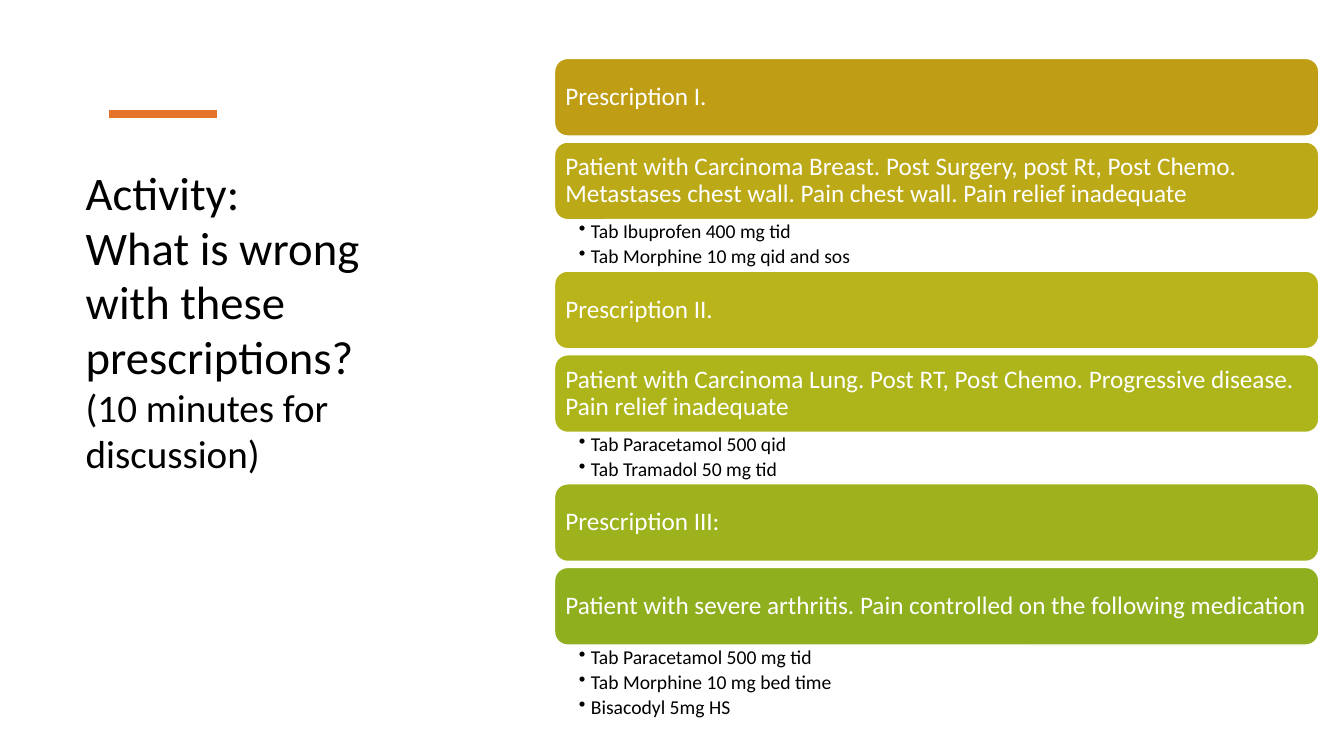
from lxml.etree import SubElement
from pptx import Presentation
from pptx.dml.color import RGBColor
from pptx.enum.shapes import MSO_CONNECTOR, MSO_SHAPE
from pptx.enum.text import MSO_ANCHOR, PP_ALIGN
from pptx.oxml.ns import qn
from pptx.util import Inches, Pt

FONT = "Calibri"
WHITE = RGBColor(0xFF, 0xFF, 0xFF)
BLACK = RGBColor(0x00, 0x00, 0x00)
ORANGE = RGBColor(0xE7, 0x72, 0x29)

# Heading, case, medication, colours of the two bars
PRESCRIPTIONS = [
    ("Prescription I.",
     "Patient with Carcinoma Breast. Post Surgery, post Rt, Post Chemo. "
     "Metastases chest wall. Pain chest wall. Pain relief inadequate",
     ["Tab Ibuprofen 400 mg tid", "Tab Morphine 10 mg qid and sos"],
     (RGBColor(0xBF, 0x9E, 0x15), RGBColor(0xBC, 0xA9, 0x17))),
    ("Prescription II.",
     "Patient with Carcinoma Lung. Post RT, Post Chemo. "
     "Progressive disease. Pain relief inadequate",
     ["Tab Paracetamol 500 qid", "Tab Tramadol 50 mg tid"],
     (RGBColor(0xB9, 0xB4, 0x19), RGBColor(0xAD, 0xB5, 0x1B))),
    ("Prescription III:",
     "Patient with severe arthritis. Pain controlled on the following medication",
     ["Tab Paracetamol 500 mg tid", "Tab Morphine 10 mg bed time",
      "Bisacodyl 5mg HS"],
     (RGBColor(0x9D, 0xB2, 0x1D), RGBColor(0x8F, 0xAF, 0x1F))),
]

LEFT, TOP, WIDTH = 5.5, 0.58, 7.58
BAR_HEIGHT, BAR_PITCH = 0.77, 0.83
LIST_OFFSET = BAR_PITCH + BAR_HEIGHT - 0.01
GROUP_PITCH = 2.11
LINE_HEIGHT = 0.26


def apply_format(target, values):
    for name, value in values.items():
        setattr(target, name, value)


def set_margins(tf, left, top, right, bottom):
    apply_format(tf, {
        "margin_left": Inches(left), "margin_top": Inches(top),
        "margin_right": Inches(right), "margin_bottom": Inches(bottom),
        "word_wrap": True})


def add_run(p, text, size, color):
    r = p.add_run()
    r.text = text
    apply_format(r.font, {"name": FONT, "size": Pt(size), "bold": False})
    r.font.color.rgb = color


def set_title(s):
    title = s.shapes.title
    apply_format(title, {"left": Inches(0.75), "top": Inches(1.5),
                         "width": Inches(3.41), "height": Inches(3.39)})
    tf = title.text_frame
    set_margins(tf, 0.1, 0.05, 0.1, 0.05)
    tf.vertical_anchor = MSO_ANCHOR.MIDDLE
    p = tf.paragraphs[0]
    apply_format(p, {"alignment": PP_ALIGN.LEFT, "line_spacing": 0.98})
    for text in ("Activity:", "What is wrong with these prescriptions?"):
        add_run(p, text, 33.3, BLACK)
        p.add_line_break()
    add_run(p, "(10 minutes for discussion)", 27.9, BLACK)


def add_accent(s):
    line = s.shapes.add_connector(MSO_CONNECTOR.STRAIGHT, Inches(1.08),
                                  Inches(1.13), Inches(2.15), Inches(1.13))
    line.line.color.rgb = ORANGE
    line.line.width = Pt(6)
    SubElement(line._element.spPr, qn("a:effectLst"))


def add_bar(s, top, text, color):
    bar = s.shapes.add_shape(MSO_SHAPE.ROUNDED_RECTANGLE, Inches(LEFT),
                             Inches(top), Inches(WIDTH), Inches(BAR_HEIGHT))
    bar.shadow.inherit = False
    bar.fill.solid()
    bar.fill.fore_color.rgb = color
    bar.line.color.rgb = WHITE
    bar.line.width = Pt(1)
    tf = bar.text_frame
    set_margins(tf, 0.07, 0.07, 0.07, 0.07)
    tf.vertical_anchor = MSO_ANCHOR.MIDDLE
    p = tf.paragraphs[0]
    apply_format(p, {"alignment": PP_ALIGN.LEFT, "line_spacing": 0.9})
    add_run(p, text, 18, WHITE)


def add_bullets(s, top, items):
    box = s.shapes.add_textbox(Inches(LEFT), Inches(top), Inches(WIDTH),
                               Inches(LINE_HEIGHT * len(items)))
    tf = box.text_frame
    set_margins(tf, 0.24, 0.03, 0.14, 0.03)
    for i, item in enumerate(items):
        p = tf.add_paragraph() if i else tf.paragraphs[0]
        apply_format(p, {"line_spacing": 0.9, "space_after": Pt(2.8)})
        pPr = p._p.get_or_add_pPr()
        pPr.set("marL", str(Inches(0.12)))
        pPr.set("indent", str(Inches(-0.12)))
        SubElement(pPr, qn("a:buChar"), char="•")
        add_run(p, item, 14, BLACK)


def main():
    prs = Presentation()
    prs.slide_width, prs.slide_height = Inches(13.33), Inches(7.5)
    s = prs.slides.add_slide(prs.slide_layouts[5])

    # Left: accent line and question
    set_title(s)
    add_accent(s)

    # Right: two bars and a medication list per prescription
    for i, (heading, case, medication, colors) in enumerate(PRESCRIPTIONS):
        top = TOP + i * GROUP_PITCH
        for j, text in enumerate((heading, case)):
            add_bar(s, top + j * BAR_PITCH, text, colors[j])
        add_bullets(s, top + LIST_OFFSET, medication)

    prs.save("out.pptx")


if __name__ == "__main__":
    main()
